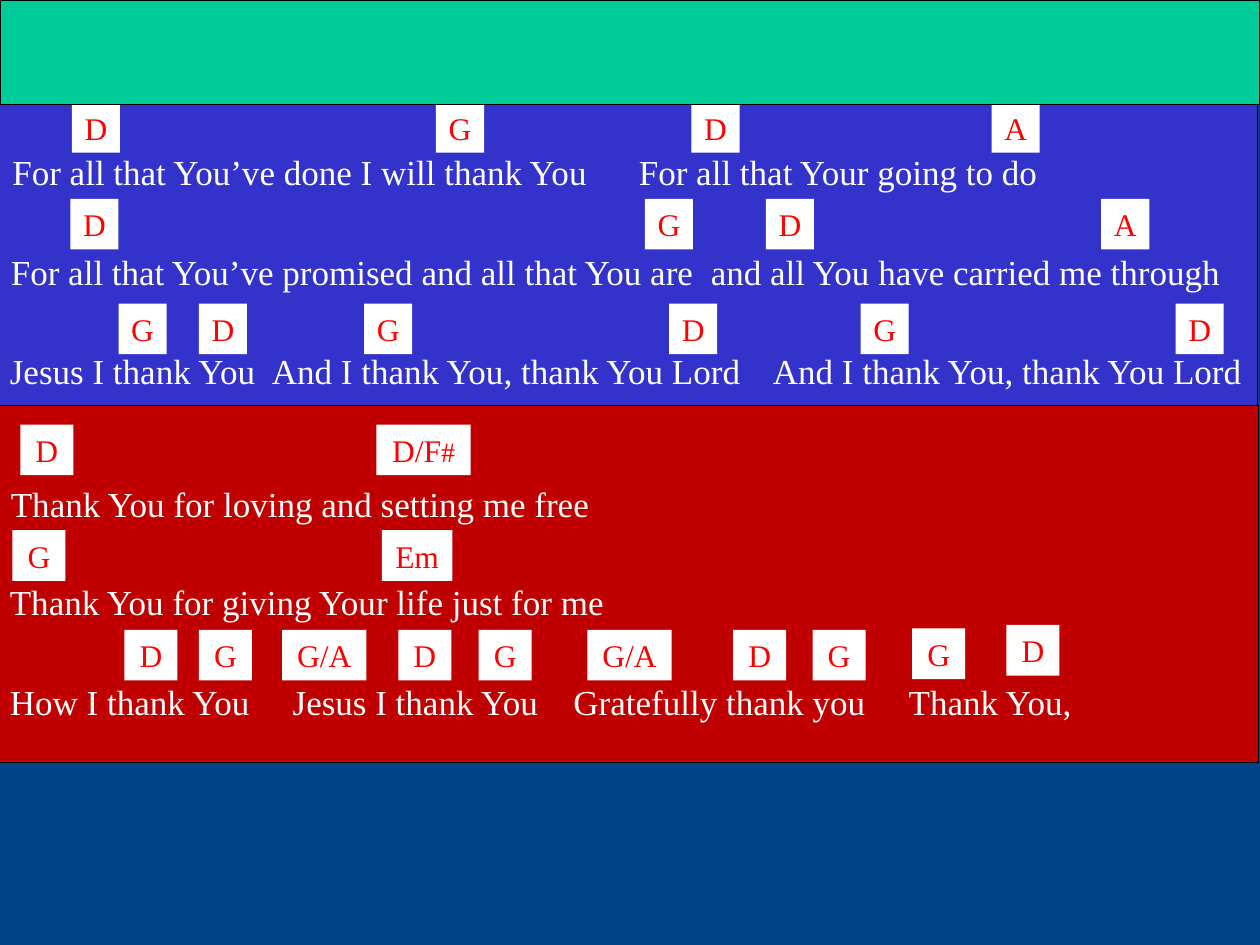
from lxml.etree import SubElement
from pptx import Presentation
from pptx.dml.color import RGBColor
from pptx.enum.shapes import MSO_SHAPE
from pptx.enum.text import MSO_ANCHOR, MSO_AUTO_SIZE, PP_ALIGN
from pptx.oxml.ns import qn
from pptx.util import Cm, Pt

# Content, lengths in cm
# Line: left, top, phrases as (x, words), chord top, chords as (x, name[, top])
VERSE = [
    (0, 2.9, [(0.25, "For all that You’ve done I will thank You"),
              (12.88, "For all that Your going to do")],
     2.06, [(1.45, "D"), (8.79, "G"), (13.94, "D"), (19.99, "A")]),
    (-0.03, 4.92, [(0.25, "For all that You’ve promised and all that You are"),
                   (14.33, "and all You have carried me through")],
     4.01, [(1.42, "D"), (13, "G"), (15.44, "D"), (22.2, "A")]),
    (-0.05, 6.93, [(0.25, "Jesus I thank You"),
                   (5.48, "And I thank You, thank You Lord"),
                   (15.58, "And I thank You, thank You Lord")],
     6.12, [(2.39, "G"), (4.01, "D"), (7.34, "G"), (13.49, "D"),
            (17.35, "G"), (23.7, "D")]),
]
CHORUS = [
    (-0.03, 9.6, [(0.25, "Thank You for loving and setting me free")],
     8.56, [(0.41, "D"), (7.59, "D/F#")]),
    (-0.05, 11.58, [(0.25, "Thank You for giving Your life just for me")],
     10.69, [(0.25, "G"), (7.7, "Em")]),
    (-0.05, 13.59, [(0.25, "How I thank You"), (5.9, "Jesus I thank You"),
                    (11.56, "Gratefully thank you"), (18.32, "Thank You,")],
     12.7, [(2.51, "D"), (4.01, "G"), (5.69, "G/A"), (8.03, "D"),
            (9.65, "G"), (11.84, "G/A"), (14.78, "D"), (16.38, "G"),
            (18.39, "G", 12.67), (20.29, "D", 12.6)]),
]
WIDE_CHORDS = {"Em": 1.42, "G/A": 1.7, "D/F#": 1.9}
PAGE_W, PAGE_H = 25.4, 19.05
CHORD_H, LYRIC_H, INSET = 1.02, 1.12, 0.25

prs = Presentation()
prs.slide_width, prs.slide_height = Cm(PAGE_W), Cm(PAGE_H)
slide = prs.slides.add_slide(prs.slide_layouts[6])


def paint(fill, color):
    fill.solid()
    fill.fore_color.rgb = RGBColor.from_string(color)


def write(frame, text, size, color, align=PP_ALIGN.LEFT, inset=INSET,
          anchor=MSO_ANCHOR.TOP, tabs=(), small=""):
    """Write one line; characters listed in small are set 2 pt smaller."""
    frame.word_wrap = True
    frame.auto_size = MSO_AUTO_SIZE.SHAPE_TO_FIT_TEXT
    frame.vertical_anchor = anchor
    frame.margin_left = frame.margin_right = Cm(inset)
    line = frame.paragraphs[0]
    line.alignment = align
    if tabs:
        stops = SubElement(line._p.get_or_add_pPr(), qn("a:tabLst"))
        for stop in tabs:
            SubElement(stops, qn("a:tab"), pos=str(Cm(stop)), algn="l")
    stem = text.rstrip(small) if small else text
    for part, points in ((stem, size), (text[len(stem):], size - 2)):
        if part:
            run = line.add_run()
            run.text = part
            run.font.name = "Times New Roman"
            run.font.size = Pt(points)
            paint(run.font.fill, color)


def add_block(left, top, width, height, color, outline=None):
    block = slide.shapes.add_shape(MSO_SHAPE.RECTANGLE, Cm(left), Cm(top),
                                   Cm(width), Cm(height))
    block.shadow.inherit = False
    paint(block.fill, color)
    if outline:
        paint(block.line.fill, outline)
        block.line.width = Pt(0.75)
    else:
        block.line.fill.background()
    return block


def add_section(lines, left, top, height, color, chord_w):
    add_block(left, top, PAGE_W, height, color, outline="000000")
    # Lyrics, each phrase after the first on its own tab stop
    for line_left, line_top, phrases, _, _ in lines:
        lyric = slide.shapes.add_textbox(Cm(line_left), Cm(line_top),
                                         Cm(PAGE_W), Cm(LYRIC_H))
        write(lyric.text_frame, "\t".join(words for _, words in phrases),
              20, "FFFFFF",
              tabs=[x - line_left - INSET for x, _ in phrases[1:]])
    # Chords above the lyrics
    for *_, row_top, chords in lines:
        for x, name, *own_top in chords:
            chord = add_block(x, own_top[0] if own_top else row_top,
                              WIDE_CHORDS.get(name, chord_w), CHORD_H, "FFFFFF")
            write(chord.text_frame, name, 18, "FF0000", align=PP_ALIGN.CENTER,
                  inset=0, anchor=MSO_ANCHOR.MIDDLE, small="#")


# Background, verse, top bar over the first chords, chorus
paint(slide.background.fill, "004487")
add_section(VERSE, -0.05, 2.06, 6.35, "3333CC", chord_w=0.97)
add_block(0, 0, PAGE_W, 2.11, "00CC99", outline="000000")
add_section(CHORUS, -0.03, 8.18, 7.19, "C00000", chord_w=1.07)

prs.save("out.pptx")
